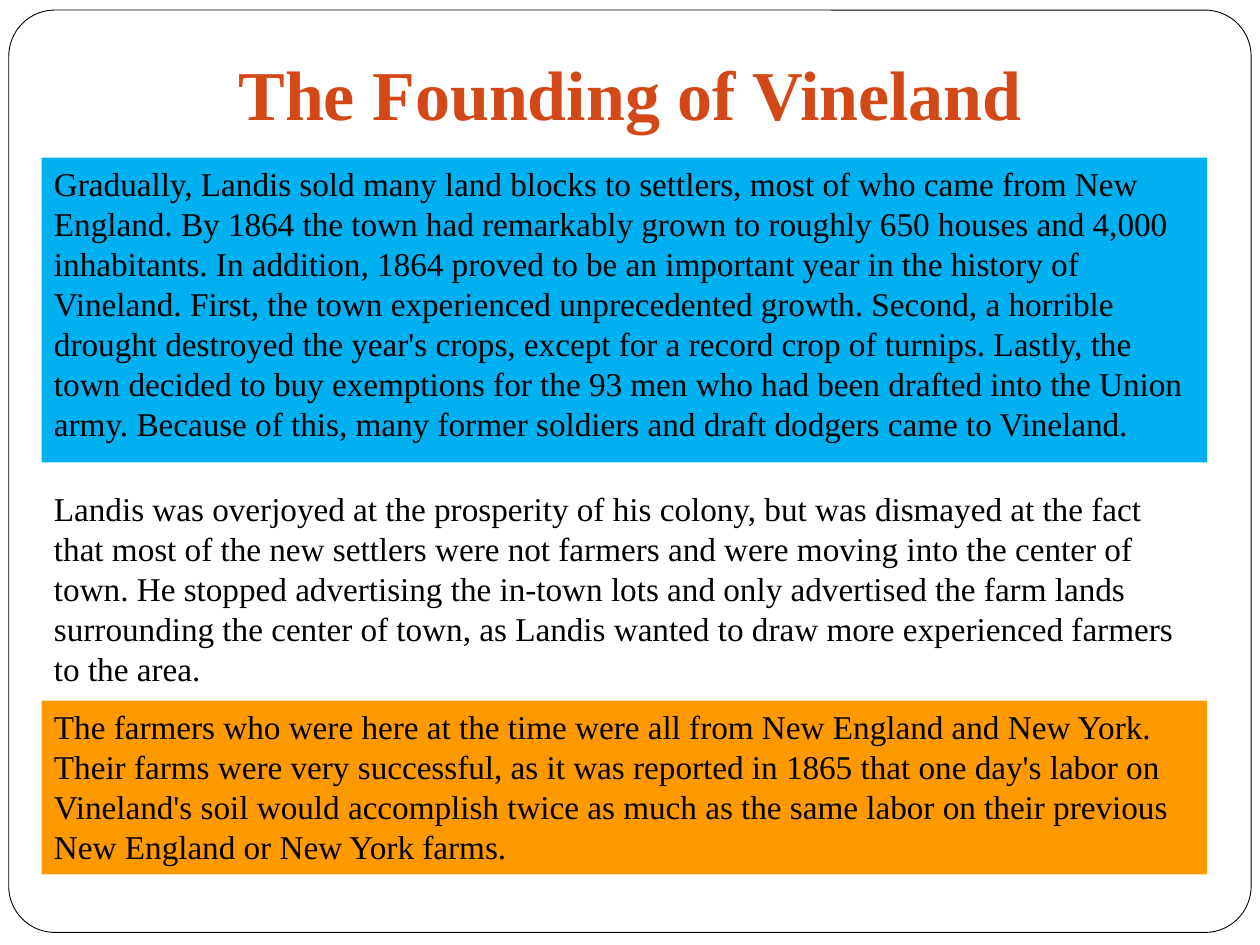
from pptx import Presentation
from pptx.dml.color import RGBColor
from pptx.enum.shapes import MSO_SHAPE as Shape
from pptx.enum.text import MSO_ANCHOR as Anchor, PP_ALIGN as Align
from pptx.util import Inches, Pt

WIDTH, HEIGHT = 10, 7.5
FONT = "Times New Roman"
COLORS = {
    "white": "FFFFFF",
    "black": "000000",
    "title": "D34817",
    "growth": "00B0F0",
    "farmers": "FF9900",
}

TITLE = "The Founding of Vineland"
GROWTH = (
    "Gradually, Landis sold many land blocks to settlers, most of who came from "
    "New England. By 1864 the town had remarkably grown to roughly 650 houses and "
    "4,000 inhabitants. In addition, 1864 proved to be an important year in the "
    "history of Vineland. First, the town experienced unprecedented growth. Second, "
    "a horrible drought destroyed the year's crops, except for a record crop of "
    "turnips. Lastly, the town decided to buy exemptions for the 93 men who had been "
    "drafted into the Union army. Because of this, many former soldiers and draft "
    "dodgers came to Vineland."
)
SETTLERS = (
    "Landis was overjoyed at the prosperity of his colony, but was dismayed at the "
    "fact that most of the new settlers were not farmers and were moving into the "
    "center of town. He stopped advertising the in-town lots and only advertised the "
    "farm lands surrounding the center of town, as Landis wanted to draw more "
    "experienced farmers to the area."
)
FARMERS = (
    "The farmers who were here at the time were all from New England and New York. "
    "Their farms were very successful, as it was reported in 1865 that one day's "
    "labor on Vineland's soil would accomplish twice as much as the same labor on "
    "their previous New England or New York farms."
)


def color(name):
    return RGBColor.from_string(COLORS[name])


def box(left, top, width, height):
    """Turn inches into the four lengths of a shape."""
    return [Inches(length) for length in (left, top, width, height)]


def write(frame, text, size, ink, bold=False, align=Align.LEFT):
    frame.word_wrap = True
    frame.text = text
    paragraph = frame.paragraphs[0]
    paragraph.alignment = align
    font = paragraph.runs[0].font
    font.name, font.size, font.bold = FONT, Pt(size), bold
    font.color.rgb = color(ink)


def add_frame(slide):
    border = slide.shapes.add_shape(
        Shape.ROUNDED_RECTANGLE, *box(0.07, 0.08, WIDTH - 0.14, HEIGHT - 0.18))
    border.adjustments[0] = 0.05
    border.shadow.inherit = False
    border.fill.solid()
    border.fill.fore_color.rgb = color("white")
    border.line.color.rgb = color("black")
    border.line.width = Pt(0.5)


def add_title(slide):
    title = slide.shapes.add_textbox(*box(0.5, 0.3, WIDTH - 1, 0.87))
    frame = title.text_frame
    write(frame, TITLE, 40, "title", bold=True, align=Align.CENTER)
    frame.vertical_anchor = Anchor.BOTTOM
    frame.margin_bottom = Inches(0.1)


def add_passage(slide, text, top, height, fill):
    passage = slide.shapes.add_shape(
        Shape.RECTANGLE, *box(0.33, top, 9.25, height))
    passage.shadow.inherit = False
    passage.fill.solid()
    passage.fill.fore_color.rgb = color(fill)
    passage.line.fill.background()
    passage.text_frame.vertical_anchor = Anchor.TOP
    write(passage.text_frame, text, 19, "black")


def main():
    deck = Presentation()
    deck.slide_width, deck.slide_height = Inches(WIDTH), Inches(HEIGHT)
    slide = deck.slides.add_slide(deck.slide_layouts[6])
    add_frame(slide)
    add_title(slide)
    for text, top, height, fill in (
        (GROWTH, 1.25, 2.42, "growth"),
        (SETTLERS, 3.83, 1.7, "white"),
        (FARMERS, 5.56, 1.38, "farmers"),
    ):
        add_passage(slide, text, top, height, fill)
    deck.save("out.pptx")


if __name__ == "__main__":
    main()
